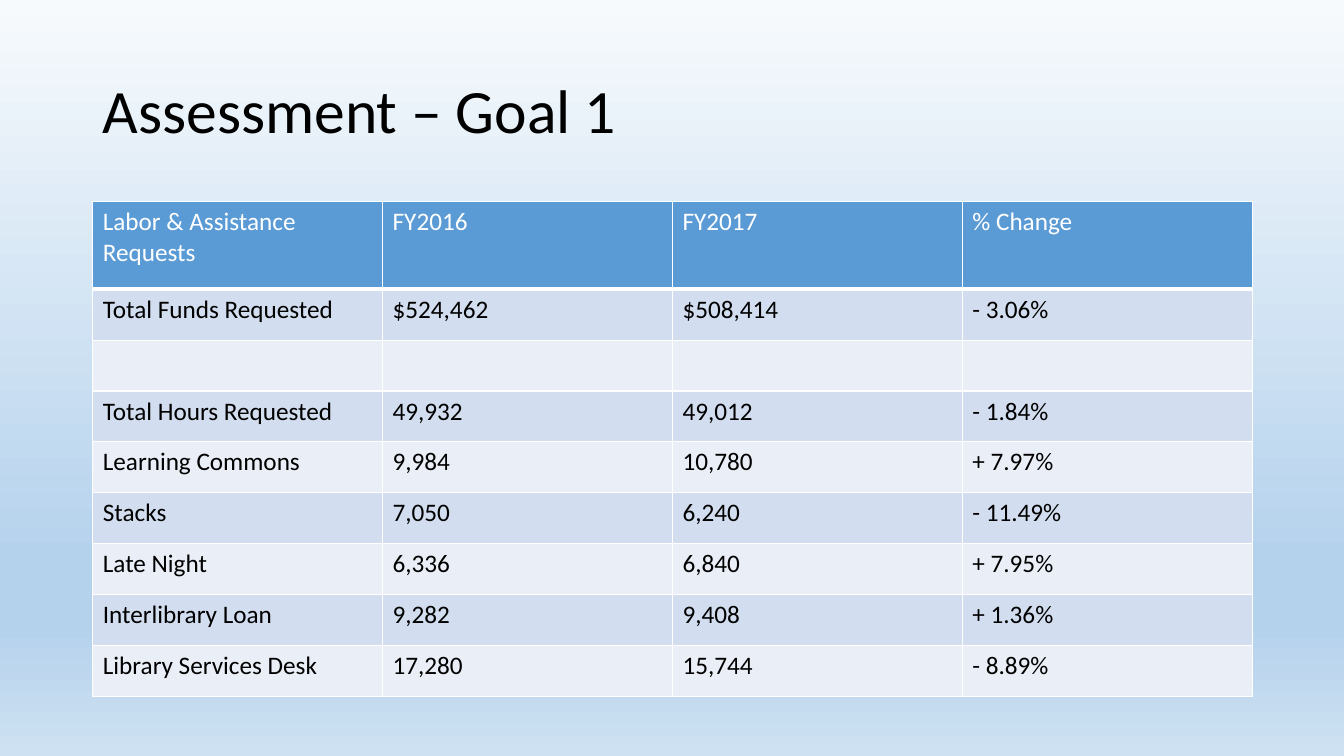
from dataclasses import dataclass
from pptx import Presentation as Deck
from pptx.dml.color import RGBColor as Rgb
from pptx.enum.text import MSO_ANCHOR as Anchor
from pptx.oxml import parse_xml
from pptx.oxml.ns import nsdecls, qn
from pptx.util import Inches, Pt


@dataclass(frozen=True)
class Theme:
    font: str = "Calibri"
    big: int = 44
    body: int = 18
    ink: str = "000000"
    white: str = "FFFFFF"
    head: str = "5B9BD5"
    bands: tuple = ("D2DEEF", "EAEFF7")
    sky: tuple = ((0, "F7FAFD"), (74, "B5D2EC"), (83, "B5D2EC"), (100, "CEE1F2"))


class Page:
    """Draws styled elements on one slide."""

    def __init__(self, slide, theme):
        self.slide, self.theme = slide, theme

    def style(self, para, size, color):
        font = para.font
        font.name, font.size, font.bold = self.theme.font, Pt(size), False
        font.color.rgb = Rgb.from_string(color)

    def backdrop(self):
        fill = self.slide.background.fill
        fill.gradient()
        fill.gradient_angle = 270
        stops = next(self.slide.element.iter(qn("a:gsLst")))
        for stop in list(stops):
            stops.remove(stop)
        for pos, color in self.theme.sky:
            stops.append(parse_xml(
                f'<a:gs {nsdecls("a")} pos="{pos * 1000}">'
                f'<a:srgbClr val="{color}"/></a:gs>'))

    def title(self, text, left, top, width, height):
        box = self.slide.shapes.add_textbox(
            Inches(left), Inches(top), Inches(width), Inches(height))
        frame = box.text_frame
        frame.word_wrap = True
        frame.vertical_anchor = Anchor.MIDDLE
        para = frame.paragraphs[0]
        para.text = text
        para.line_spacing = 0.9
        self.style(para, self.theme.big, self.theme.ink)

    def border(self, cell, base):
        props = cell._tc.get_or_add_tcPr()
        for side, width in zip("LRTB", (1, 1, 1, base)):
            props.append(parse_xml(
                f'<a:ln{side} {nsdecls("a")} w="{Pt(width)}"><a:solidFill>'
                f'<a:srgbClr val="{self.theme.white}"/></a:solidFill></a:ln{side}>'))

    def cell(self, cell, text, fill, ink, base):
        self.border(cell, base)
        cell.fill.solid()
        cell.fill.fore_color.rgb = Rgb.from_string(fill)
        para = cell.text_frame.paragraphs[0]
        if text:
            para.text = text
        self.style(para, self.theme.body, ink)

    def table(self, data, left, top, width, first, rest):
        height = first + rest * (len(data) - 1)
        grid = self.slide.shapes.add_table(
            len(data), len(data[0]), Inches(left), Inches(top),
            Inches(width), Inches(height)).table
        grid.horz_banding = False
        theme = self.theme
        for i, line in enumerate(data):
            grid.rows[i].height = Inches(rest if i else first)
            look = (theme.bands[(i - 1) % 2], theme.ink, 1) if i else (
                theme.head, theme.white, 3)
            for j, text in enumerate(line):
                self.cell(grid.cell(i, j), text, *look)


DATA = (
    ("Labor & Assistance Requests", "FY2016", "FY2017", "% Change"),
    ("Total Funds Requested", "$524,462", "$508,414", "- 3.06%"),
    ("", "", "", ""),
    ("Total Hours Requested", "49,932", "49,012", "- 1.84%"),
    ("Learning Commons", "9,984", "10,780", "+ 7.97%"),
    ("Stacks", "7,050", "6,240", "- 11.49%"),
    ("Late Night", "6,336", "6,840", "+ 7.95%"),
    ("Interlibrary Loan", "9,282", "9,408", "+ 1.36%"),
    ("Library Services Desk", "17,280", "15,744", "- 8.89%"),
)


def main():
    deck = Deck()
    deck.slide_width, deck.slide_height = Inches(13.33), Inches(7.5)
    page = Page(deck.slides.add_slide(deck.slide_layouts[6]), Theme())
    page.backdrop()
    page.title("Assessment – Goal 1", 0.92, 0.4, 11.5, 1.45)
    page.table(DATA, 0.92, 2, 11.5, 0.87, 0.505)
    deck.save("out.pptx")


if __name__ == "__main__":
    main()
